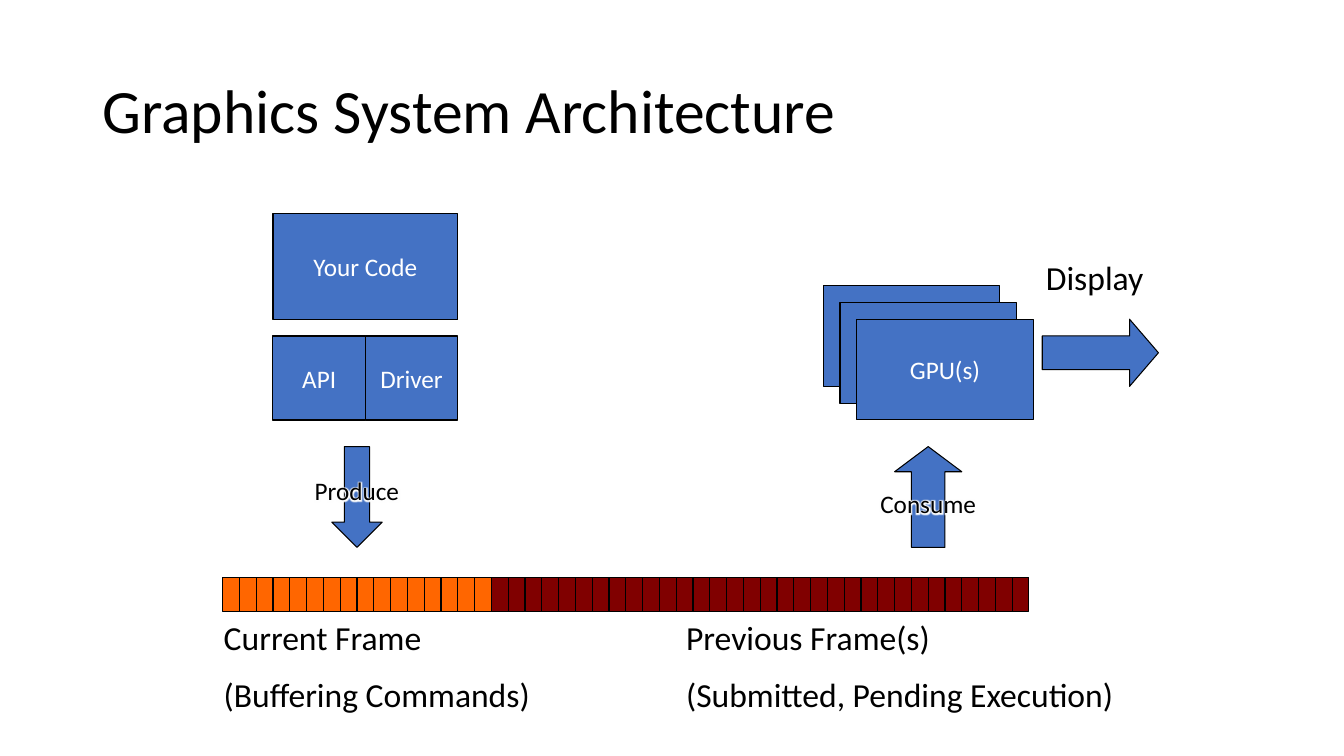
"""Builds the Graphics System Architecture slide."""
from lxml import etree
from pptx import Presentation
from pptx import util as u
from pptx.dml.color import RGBColor
from pptx.enum import shapes, text
from pptx.oxml import ns

BLACK = RGBColor(0x00, 0x00, 0x00)
WHITE = RGBColor(0xFF, 0xFF, 0xFF)
BLUE = RGBColor(0x44, 0x72, 0xC4)
ORANGE = RGBColor(0xFF, 0x66, 0x00)
MAROON = RGBColor(0x80, 0x00, 0x00)
KIND = shapes.MSO_SHAPE


class Diagram:
    """Holds the type style and the slide being drawn."""

    font_name = "Calibri"

    def __init__(self, slide):
        self.slide = slide

    def style(self, paragraph, size, color):
        """Format every run of a paragraph."""
        for run in paragraph.runs:
            run.font.name = self.font_name
            run.font.size = u.Pt(size)
            run.font.color.rgb = color

    def title(self, wording, left, top, width, height):
        """Fill and place the title placeholder."""
        heading = self.slide.shapes.title
        heading.left, heading.top = u.Pt(left), u.Pt(top)
        heading.width, heading.height = u.Pt(width), u.Pt(height)
        frame = heading.text_frame
        frame.text = wording
        frame.vertical_anchor = text.MSO_ANCHOR.MIDDLE
        line = frame.paragraphs[0]
        line.alignment = text.PP_ALIGN.LEFT
        line.line_spacing = 0.9
        self.style(line, 44, BLACK)

    def block(self, left, top, width, height, label="", fill=BLUE,
              color=WHITE, kind=KIND.RECTANGLE, adjust=()):
        """Draw an outlined shape with an optional centred label."""
        part = self.slide.shapes.add_shape(
            kind, u.Pt(left), u.Pt(top), u.Pt(width), u.Pt(height))
        part.shadow.inherit = False
        part.fill.solid()
        part.fill.fore_color.rgb = fill
        part.line.color.rgb = BLACK
        part.line.width = u.Pt(0.75)
        for index, value in enumerate(adjust):
            part.adjustments[index] = value
        if label:
            frame = part.text_frame
            frame.text = label
            frame.word_wrap = False
            frame.vertical_anchor = text.MSO_ANCHOR.MIDDLE
            frame.paragraphs[0].alignment = text.PP_ALIGN.CENTER
            self.style(frame.paragraphs[0], 18, color)
        return part

    def flow(self, left, top, width, height, label, kind, adjust):
        """Draw an arrow whose dark label has a white glow."""
        arrow = self.block(left, top, width, height, label,
                           color=BLACK, kind=kind, adjust=adjust)
        ink = arrow.text_frame.paragraphs[0].runs[0].font.fill
        ink.solid()
        ink.fore_color.rgb = BLACK
        color_fill = next(arrow.element.txBody.iter(ns.qn("a:solidFill")))
        effects = etree.Element(ns.qn("a:effectLst"))
        glow = etree.SubElement(effects, ns.qn("a:glow"), rad=str(u.Pt(5)))
        etree.SubElement(glow, ns.qn("a:srgbClr"), val=str(WHITE))
        color_fill.addnext(effects)

    def caption(self, left, top, width, height, *lines):
        """Write a text box with one paragraph per line."""
        box = self.slide.shapes.add_textbox(
            u.Pt(left), u.Pt(top), u.Pt(width), u.Pt(height))
        frame = box.text_frame
        frame.text = "\n".join(lines)
        frame.word_wrap = True
        frame.auto_size = text.MSO_AUTO_SIZE.SHAPE_TO_FIT_TEXT
        for line in frame.paragraphs:
            line.space_before = u.Pt(12)
            self.style(line, 24, BLACK)

    def command_buffer(self, left, top, cell_width, height, runs):
        """Draw a row of equal cells from (colour, count) runs."""
        colors = [color for color, count in runs for _ in range(count)]
        for index, color in enumerate(colors):
            self.block(left + index * cell_width, top, cell_width, height,
                       fill=color)


def main():
    """Draw the slide and save it."""
    deck = Presentation()
    deck.slide_width, deck.slide_height = u.Pt(960), u.Pt(540)
    diagram = Diagram(deck.slides.add_slide(deck.slide_layouts[5]))

    diagram.title("Graphics System Architecture", 66, 28.75, 828, 104.4)

    diagram.block(195, 152.5, 132, 76, "Your Code")
    for column, layer in enumerate(("API", "Driver")):
        diagram.block(195 + column * 66, 240, 66, 60, layer)

    diagram.command_buffer(159, 412.5, 12, 24, ((ORANGE, 16), (MAROON, 32)))
    diagram.caption(152.75, 437, 294, 80,
                    "Current Frame", "(Buffering Commands)")
    diagram.caption(483, 437, 331, 80,
                    "Previous Frame(s)", "(Submitted, Pending Execution)")

    for depth, processor in enumerate(("", "", "GPU(s)")):
        diagram.block(588 + depth * 12, 204 + depth * 12, 126, 72, processor)

    diagram.flow(237, 319, 36, 72, "Produce", KIND.DOWN_ARROW, (0.5, 0.5))
    diagram.flow(639, 319, 48, 72, "Consume", KIND.UP_ARROW, (0.5, 0.375))
    diagram.block(744.5, 228, 83, 48, kind=KIND.RIGHT_ARROW,
                  adjust=(0.5, 0.43))
    diagram.caption(740, 180, 92, 36, "Display")

    deck.save("out.pptx")


if __name__ == "__main__":
    main()
